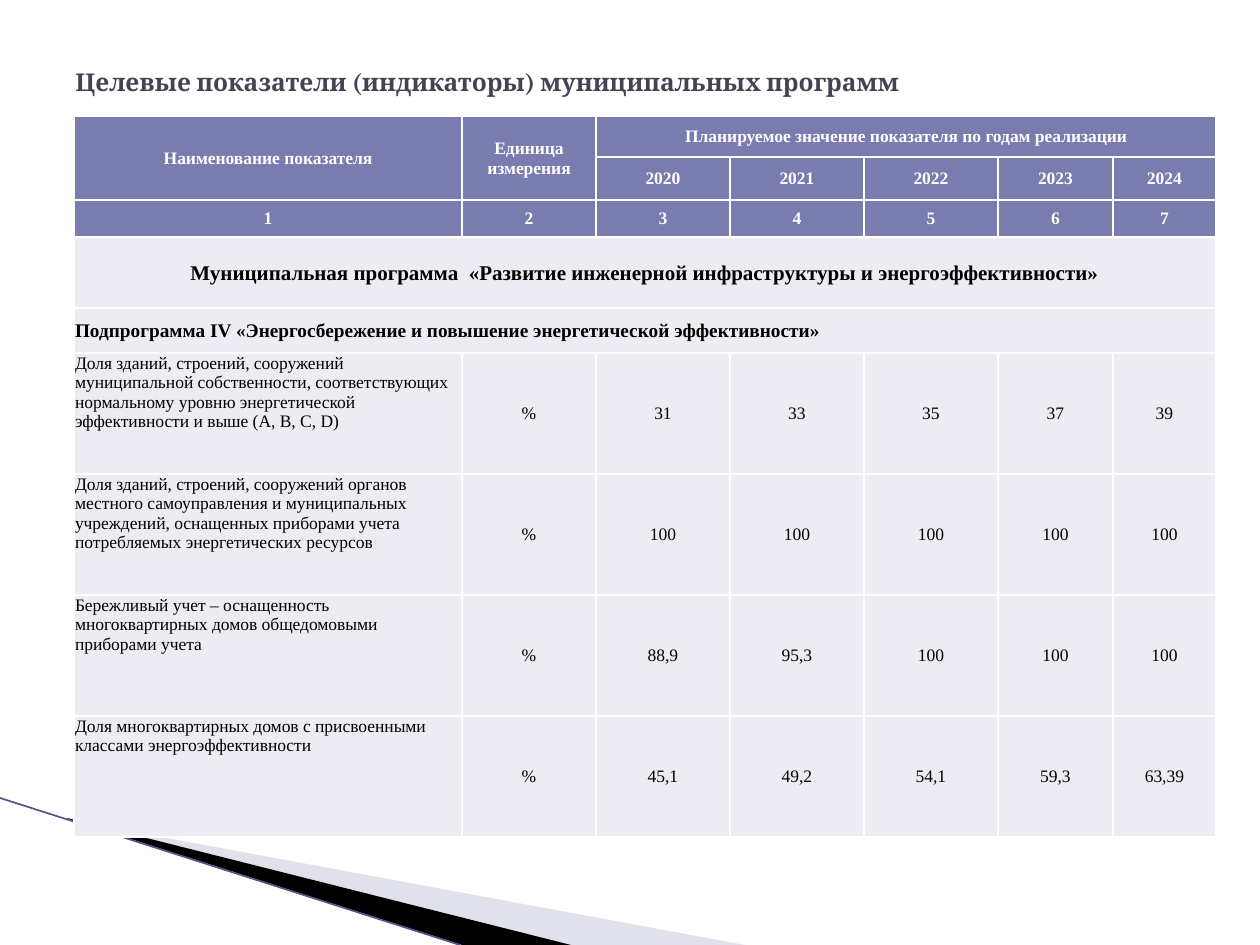
import pptx
import pptx.util
import pptx.dml.color
import pptx.enum.text
import pptx.oxml
import pptx.oxml.ns
from dataclasses import dataclass
from lxml import etree

PX = 914400 / 126
ALIGN = pptx.enum.text.PP_ALIGN
ANCHOR = pptx.enum.text.MSO_ANCHOR


@dataclass(frozen=True)
class Theme:
    title_font: str = "Cambria"
    table_font: str = "Times New Roman"
    title: str = "424456"
    header: str = "7A7BAE"
    body: str = "ECECF2"
    white: str = "FFFFFF"
    black: str = "000000"
    wedge: str = "B6B6D1"
    accent: str = "53548A"
    title_size: int = 14
    program_size: int = 12
    subprogram_size: int = 11
    cell_size: int = 10


def emu(px):
    return pptx.util.Emu(round(px * PX))


def rgb(value):
    return pptx.dml.color.RGBColor.from_string(value)


class Deck:
    def __init__(self, theme, width, height):
        self.theme = theme
        self.prs = pptx.Presentation()
        self.prs.slide_width, self.prs.slide_height = emu(width), emu(height)
        self.slide = self.prs.slides.add_slide(self.prs.slide_layouts[6])

    def style(self, tf, text, font, size, color, bold, align):
        tf.text = text
        p = tf.paragraphs[0]
        p.alignment = align
        for r in p.runs:
            r.font.name, r.font.size, r.font.bold = font, pptx.util.Pt(size), bold
            r.font.color.rgb = rgb(color)

    def wedge(self, points, color, alpha=None):
        builder = self.slide.shapes.build_freeform(*points[0], scale=PX)
        builder.add_line_segments(points[1:], close=True)
        sp = builder.convert_to_shape()
        sp.shadow.inherit = False
        sp.line.fill.background()
        sp.fill.solid()
        sp.fill.fore_color.rgb = rgb(color)
        if alpha is not None:
            clr = sp._element.spPr.find(".//" + pptx.oxml.ns.qn("a:srgbClr"))
            etree.SubElement(clr, pptx.oxml.ns.qn("a:alpha"), val=str(alpha * 1000))

    def line(self, start, end, color, width):
        cx = self.slide.shapes.add_connector(
            pptx.enum.shapes.MSO_CONNECTOR.STRAIGHT, *map(emu, start + end))
        cx.line.color.rgb = rgb(color)
        cx.line.width = pptx.util.Pt(width)
        etree.SubElement(cx._element.spPr, pptx.oxml.ns.qn("a:effectLst"))

    def title(self, text, left, top, width, height):
        tf = self.slide.shapes.add_textbox(*map(emu, (left, top, width, height))).text_frame
        tf.word_wrap = True
        tf.vertical_anchor = ANCHOR.MIDDLE
        t = self.theme
        self.style(tf, text, t.title_font, t.title_size, t.title, True, ALIGN.LEFT)

    def table(self, left, top, columns, rows):
        table = self.slide.shapes.add_table(
            len(rows), len(columns), emu(left), emu(top),
            emu(sum(columns)), emu(sum(rows))).table
        for column, width in zip(table.columns, columns):
            column.width = emu(width)
        for row, height in zip(table.rows, rows):
            row.height = emu(height)
        return table

    def cell(self, cell, text, fill, color, size, bold,
             align=ALIGN.CENTER, anchor=ANCHOR.MIDDLE):
        cell.margin_left = cell.margin_right = cell.margin_top = emu(1)
        cell.margin_bottom = 0
        cell.vertical_anchor = anchor
        cell.fill.solid()
        cell.fill.fore_color.rgb = rgb(fill)
        self.style(cell.text_frame, text, self.theme.table_font, size, color, bold, align)
        for i, side in enumerate(("lnL", "lnR", "lnT", "lnB")):
            cell._tc.get_or_add_tcPr().insert(i, pptx.oxml.parse_xml(
                f'<a:{side} {pptx.oxml.ns.nsdecls("a")} w="12700"><a:solidFill>'
                f'<a:srgbClr val="{self.theme.white}"/></a:solidFill></a:{side}>'))


HEADER = [
    ["Наименование показателя", "Единица измерения",
     "Планируемое значение показателя по годам реализации", "", "", "", ""],
    ["", "", "2020", "2021", "2022", "2023", "2024"],
    [str(n) for n in range(1, 8)],
]
PROGRAM = "Муниципальная программа  «Развитие инженерной инфраструктуры и энергоэффективности»"
SUBPROGRAM = "Подпрограмма IV «Энергосбережение и повышение энергетической эффективности»"
INDICATORS = [
    ["Доля зданий, строений, сооружений муниципальной собственности, соответствующих "
     "нормальному уровню энергетической эффективности и выше (А, В, С, D)",
     "%", "31", "33", "35", "37", "39"],
    ["Доля зданий, строений, сооружений органов местного самоуправления и муниципальных "
     "учреждений, оснащенных приборами учета потребляемых энергетических ресурсов",
     "%", "100", "100", "100", "100", "100"],
    ["Бережливый учет – оснащенность многоквартирных домов общедомовыми приборами учета",
     "%", "88,9", "95,3", "100", "100", "100"],
    ["Доля многоквартирных домов с присвоенными классами энергоэффективности",
     "%", "45,1", "49,2", "54,1", "59,3", "63,39"],
]


def main():
    t = Theme()
    deck = Deck(t, 1260, 945)

    # Corner decoration
    deck.wedge([(69, 820), (745, 945), (570, 945), (69, 819)], t.wedge, alpha=40)
    deck.wedge([(67, 818), (571, 945), (462, 945), (68, 819)], t.black)
    deck.line((0, 798), (460, 945), t.accent, 0.95)

    # Title
    deck.title("Целевые показатели (индикаторы) муниципальных программ", 63, 38, 1134, 87)

    # Table grid and merged cells
    table = deck.table(74, 116, [388] + [134] * 4 + [115, 103],
                       [41, 40, 37, 71, 45] + [121] * 4)
    for first, last in [((0, 0), (1, 0)), ((0, 1), (1, 1)), ((0, 2), (0, 6)),
                        ((3, 0), (3, 6)), ((4, 0), (4, 6))]:
        table.cell(*first).merge(table.cell(*last))

    # Header rows
    for r, row in enumerate(HEADER):
        for c, text in enumerate(row):
            deck.cell(table.cell(r, c), text, t.header, t.white, t.cell_size, True)

    # Programme and subprogramme rows
    for r, text, size, align in [(3, PROGRAM, t.program_size, ALIGN.CENTER),
                                 (4, SUBPROGRAM, t.subprogram_size, ALIGN.LEFT)]:
        for c in range(7):
            deck.cell(table.cell(r, c), "" if c else text, t.body, t.black, size, True, align)

    # Indicator rows
    for r, row in enumerate(INDICATORS, start=5):
        for c, text in enumerate(row):
            place = (ALIGN.CENTER, ANCHOR.MIDDLE) if c else (ALIGN.LEFT, ANCHOR.TOP)
            deck.cell(table.cell(r, c), text, t.body, t.black, t.cell_size, False, *place)

    deck.prs.save("out.pptx")


if __name__ == "__main__":
    main()
